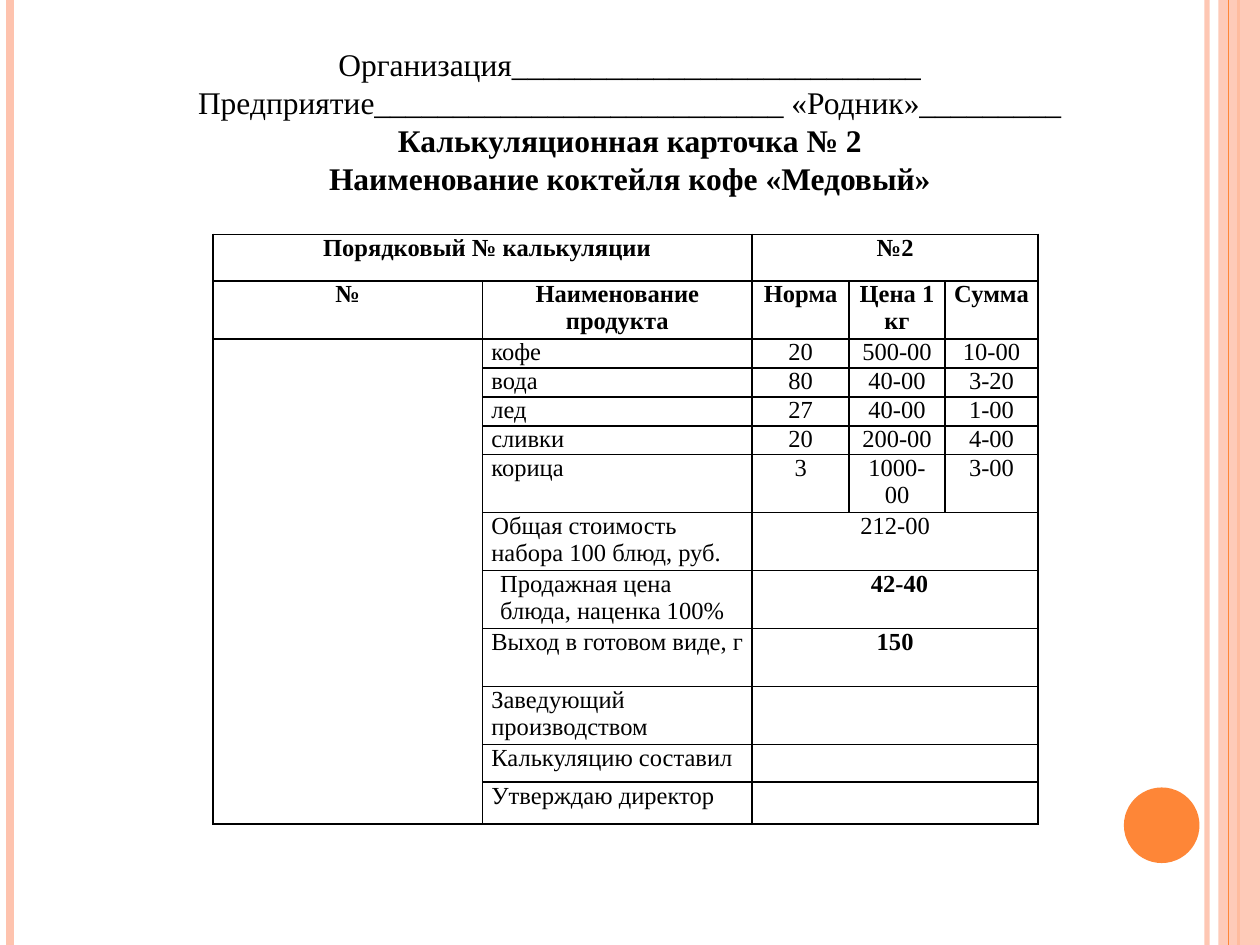
from lxml import etree
from pptx import Presentation
from pptx.dml.color import RGBColor
from pptx.enum.shapes import MSO_CONNECTOR, MSO_SHAPE
from pptx.enum.text import MSO_ANCHOR, MSO_AUTO_SIZE, PP_ALIGN
from pptx.oxml.ns import qn
from pptx.util import Inches, Pt

STRAIGHT = MSO_CONNECTOR.STRAIGHT
RECTANGLE, OVAL = MSO_SHAPE.RECTANGLE, MSO_SHAPE.OVAL
TOP, NO_FIT = MSO_ANCHOR.TOP, MSO_AUTO_SIZE.NONE
LEFT, CENTER = PP_ALIGN.LEFT, PP_ALIGN.CENTER
BLACK = RGBColor(0x00, 0x00, 0x00)
PEACH = RGBColor(0xFE, 0xC3, 0xAE)
ORANGE = RGBColor(0xFE, 0x86, 0x37)
FONT = "Times New Roman"
WIDTH, HEIGHT = 10, 7.5

HEADING = [
    ("Организация" + "_" * 26, False),
    ("Предприятие" + "_" * 26 + " «Родник»" + "_" * 9, False),
    ("Калькуляционная карточка № 2", True),
    ("Наименование коктейля кофе «Медовый»", True),
]
COLUMN_WIDTHS = [2.14, 2.14, 0.77, 0.76, 0.74]
ROWS = [
    (0.37, ["Порядковый № калькуляции", "", "№2"]),
    (0.46, ["№", "Наименование продукта", "Норма", "Цена 1 кг", "Сумма"]),
    (0.23, ["", "кофе", "20", "500-00", "10-00"]),
    (0.23, ["", "вода", "80", "40-00", "3-20"]),
    (0.23, ["", "лед", "27", "40-00", "1-00"]),
    (0.23, ["", "сливки", "20", "200-00", "4-00"]),
    (0.46, ["", "корица", "3", "1000-00", "3-00"]),
    (0.46, ["", "Общая стоимость набора 100 блюд, руб.", "212-00"]),
    (0.46, ["", "Продажная цена блюда, наценка 100%", "42-40"]),
    (0.46, ["", "Выход в готовом виде, г", "150"]),
    (0.46, ["", "Заведующий производством", ""]),
    (0.3, ["", "Калькуляцию составил", ""]),
    (0.33, ["", "Утверждаю директор", ""]),
]
HEADER_ROWS = 2
BOLD_VALUES = {"42-40", "150"}
INDENTED_ROWS = {0: [0], 8: [1, 2]}
STRIPES = [
    (9.58, PEACH, 3, 93),
    (0.08, PEACH, 4.5, 100),
    (9.83, ORANGE, 1.5, 100),
    (9.75, ORANGE, 0.75, 100),
]


def set_opacity(element, percent):
    color = next(element.iter(qn("a:srgbClr")))
    etree.SubElement(color, qn("a:alpha")).set("val", str(percent * 1000))


def add_stripe(slide, x, color, width, opacity):
    stripe = slide.shapes.add_connector(STRAIGHT, Inches(x), 0, Inches(x), Inches(HEIGHT))
    stripe.line.color.rgb = color
    stripe.line.width = Pt(width)
    set_opacity(stripe.line._ln, opacity)
    etree.SubElement(stripe._element.spPr, qn("a:effectLst"))


def add_block(slide, kind, left, top, width, height, color, opacity=100):
    block = slide.shapes.add_shape(kind, *map(Inches, (left, top, width, height)))
    block.shadow.inherit = False
    block.fill.solid()
    block.fill.fore_color.rgb = color
    set_opacity(block.fill._xPr, opacity)
    block.line.fill.background()


def format_runs(paragraph, size, bold):
    for run in paragraph.runs:
        run.font.name = FONT
        run.font.size = Pt(size)
        run.font.bold = bold
        run.font.color.rgb = BLACK


def fill_heading(title):
    title.left, title.top, title.width, title.height = map(Inches, (0, 0.31, WIDTH, 1.62))
    frame = title.text_frame
    frame.auto_size = NO_FIT
    frame.vertical_anchor = TOP
    frame.text = "\n".join(text for text, _ in HEADING)
    for paragraph, (_, bold) in zip(frame.paragraphs, HEADING):
        paragraph.alignment = CENTER
        format_runs(paragraph, 18, bold)


def format_cell(cell):
    cell.margin_left = cell.margin_right = Inches(0.07)
    cell.margin_top = cell.margin_bottom = 0
    properties = cell._tc.get_or_add_tcPr()
    for side in ("lnL", "lnR", "lnT", "lnB"):
        border = etree.SubElement(properties, qn(f"a:{side}"), w=str(Pt(1)))
        fill = etree.SubElement(border, qn("a:solidFill"))
        etree.SubElement(fill, qn("a:srgbClr"), val=str(BLACK))
    cell.fill.background()


def add_cost_table(slide):
    heights = [height for height, _ in ROWS]
    frame = slide.shapes.add_table(
        len(ROWS), len(COLUMN_WIDTHS), Inches(1.69), Inches(1.86),
        Inches(sum(COLUMN_WIDTHS)), Inches(sum(heights)))
    table = frame.table
    table.first_row = table.horz_banding = False
    for column, width in zip(table.columns, COLUMN_WIDTHS):
        column.width = Inches(width)
    for row, height in zip(table.rows, heights):
        row.height = Inches(height)
    for cell in table.iter_cells():
        format_cell(cell)
        ending = cell.text_frame.paragraphs[0]._p.get_or_add_endParaRPr()
        ending.set("sz", "1400")

    last_row, last_column = len(ROWS) - 1, len(COLUMN_WIDTHS) - 1
    table.cell(0, 0).merge(table.cell(0, 1))
    table.cell(HEADER_ROWS, 0).merge(table.cell(last_row, 0))
    for r, (_, values) in enumerate(ROWS):
        if len(values) <= last_column:
            table.cell(r, 2).merge(table.cell(r, last_column))
        for c, value in enumerate(values):
            if not value:
                continue
            paragraph = table.cell(r, c).text_frame.paragraphs[0]
            if c in INDENTED_ROWS.get(r, []):
                paragraph._p.get_or_add_pPr().set("marL", str(Inches(0.07)))
            paragraph.add_run().text = value
            paragraph.alignment = LEFT if r >= HEADER_ROWS and c == 1 else CENTER
            format_runs(paragraph, 14, r < HEADER_ROWS or value in BOLD_VALUES)


def main():
    """Build the costing card slide."""
    presentation = Presentation()
    presentation.slide_width, presentation.slide_height = Inches(WIDTH), Inches(HEIGHT)
    slide = presentation.slides.add_slide(presentation.slide_layouts[5])
    for stripe in STRIPES[:3]:
        add_stripe(slide, *stripe)
    add_block(slide, RECTANGLE, 9.67, 0, 0.33, HEIGHT, PEACH, 87)
    add_stripe(slide, *STRIPES[3])
    add_block(slide, OVAL, 8.92, 6.25, 0.6, 0.6, ORANGE)
    add_cost_table(slide)
    fill_heading(slide.shapes.title)
    presentation.save("out.pptx")


if __name__ == "__main__":
    main()
